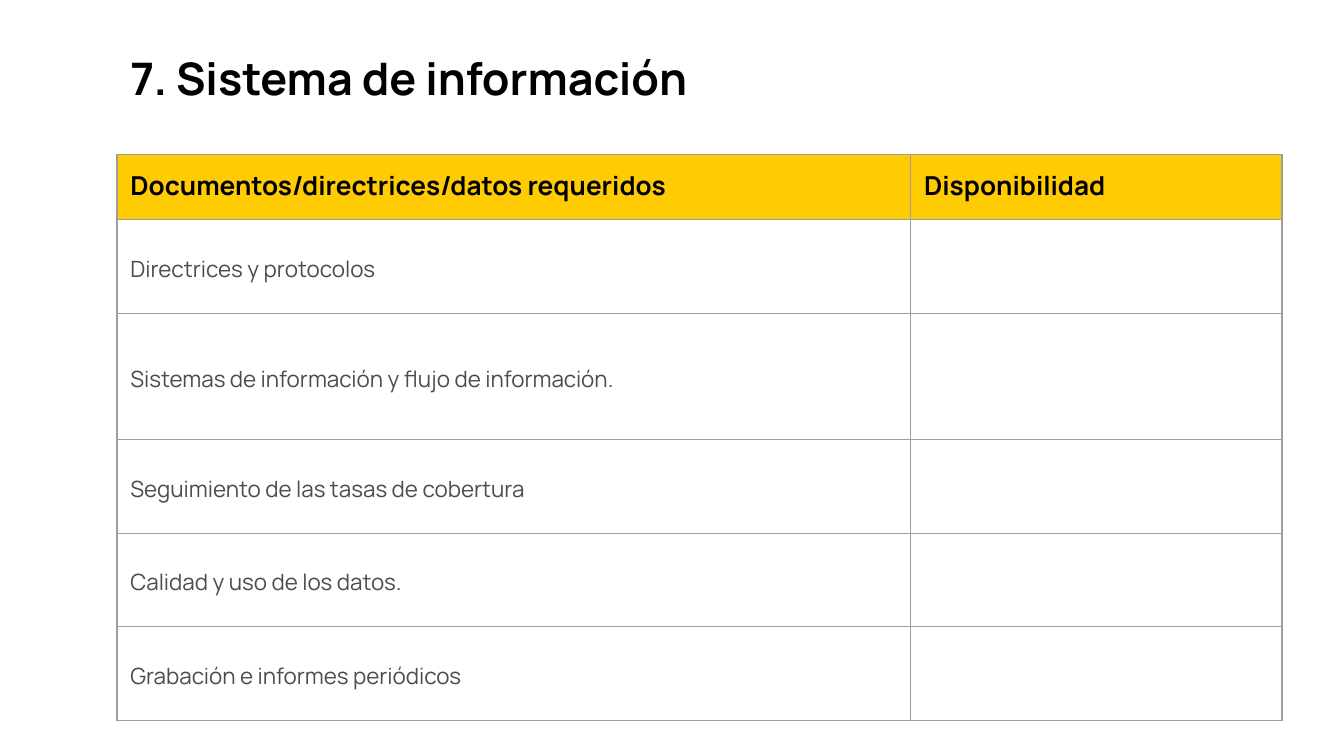
from dataclasses import dataclass

from lxml import etree
from pptx import Presentation
from pptx.dml.color import RGBColor
from pptx.enum.text import MSO_ANCHOR, MSO_AUTO_SIZE, PP_ALIGN
from pptx.oxml.ns import qn
from pptx.util import Pt

TOP, MIDDLE = MSO_ANCHOR.TOP, MSO_ANCHOR.MIDDLE
LEFT = PP_ALIGN.LEFT
NO_AUTOFIT = MSO_AUTO_SIZE.NONE
TITLE_ONLY = 5

FONT = "Manrope"
BLACK, GREY, YELLOW, BORDER = "000000", "4C4C4C", "FFCB03", "9E9E9E"
INSET = Pt(7.2)
TABLE_LEFT = 62.64
TABLE_TOP = 82.8
COLUMN_WIDTHS = (425.2, 199)


@dataclass(frozen=True)
class TextStyle:
    size: float
    color: str
    bold: bool
    line_spacing: float = 1.0


@dataclass(frozen=True)
class Row:
    texts: tuple[str, str]
    height: float = 50.1


TITLE_STYLE = TextStyle(24, BLACK, True)
HEADER_STYLE = TextStyle(14, BLACK, True)
BODY_STYLE = TextStyle(12, GREY, False, 1.15)

ROWS = (
    Row(("Documentos/directrices/datos requeridos", "Disponibilidad"), 35),
    Row(("Directrices y protocolos", "")),
    Row(("Sistemas de información y flujo de información.", ""), 67.7),
    Row(("Seguimiento de las tasas de cobertura", "")),
    Row(("Calidad y uso de los datos.", "")),
    Row(("Grabación e informes periódicos", "")),
)


def rgb(color: str) -> RGBColor:
    return RGBColor.from_string(color)


def write(para, text: str, style: TextStyle) -> None:
    para.alignment = LEFT
    para.line_spacing = style.line_spacing
    span = para.add_run()
    span.text = text
    span.font.name = FONT
    span.font.size = Pt(style.size)
    span.font.bold = style.bold
    span.font.color.rgb = rgb(style.color)


def set_insets(target) -> None:
    target.margin_left = target.margin_right = INSET
    target.margin_top = target.margin_bottom = INSET


def add_borders(cell) -> None:
    """Outline the cell; border elements must precede its fill."""
    properties = cell._tc.get_or_add_tcPr()
    for index, side in enumerate(("a:lnL", "a:lnR", "a:lnT", "a:lnB")):
        line = etree.Element(qn(side), w=str(Pt(0.75)))
        fill = etree.SubElement(line, qn("a:solidFill"))
        etree.SubElement(fill, qn("a:srgbClr"), val=BORDER)
        properties.insert(index, line)


def format_cell(cell, text: str, is_header: bool) -> None:
    set_insets(cell)
    cell.vertical_anchor = TOP if is_header else MIDDLE
    if is_header:
        cell.fill.solid()
        cell.fill.fore_color.rgb = rgb(YELLOW)
    else:
        cell.fill.background()
    add_borders(cell)
    if text:
        style = HEADER_STYLE if is_header else BODY_STYLE
        write(cell.text_frame.paragraphs[0], text, style)


def add_title(page, text: str) -> None:
    title = page.shapes.title
    title.left, title.top = Pt(TABLE_LEFT), Pt(20.16)
    title.width, title.height = Pt(657.36), Pt(42.5)
    box = title.text_frame
    box.word_wrap = True
    box.auto_size = NO_AUTOFIT
    box.vertical_anchor = TOP
    set_insets(box)
    write(box.paragraphs[0], text, TITLE_STYLE)


def add_availability_table(page, rows: tuple[Row, ...]) -> None:
    frame = page.shapes.add_table(
        len(rows), len(COLUMN_WIDTHS), Pt(TABLE_LEFT), Pt(TABLE_TOP),
        Pt(sum(COLUMN_WIDTHS)), Pt(sum(row.height for row in rows)))
    table = frame.table
    table.horz_banding = False
    for column, width in zip(table.columns, COLUMN_WIDTHS):
        column.width = Pt(width)
    for index, row in enumerate(rows):
        table.rows[index].height = Pt(row.height)
        for cell, text in zip(table.rows[index].cells, row.texts):
            format_cell(cell, text, is_header=index == 0)


def main() -> None:
    deck = Presentation()
    deck.slide_width, deck.slide_height = Pt(720), Pt(405)
    page = deck.slides.add_slide(deck.slide_layouts[TITLE_ONLY])
    add_title(page, "7. Sistema de información")
    add_availability_table(page, ROWS)
    deck.save("out.pptx")


if __name__ == "__main__":
    main()
